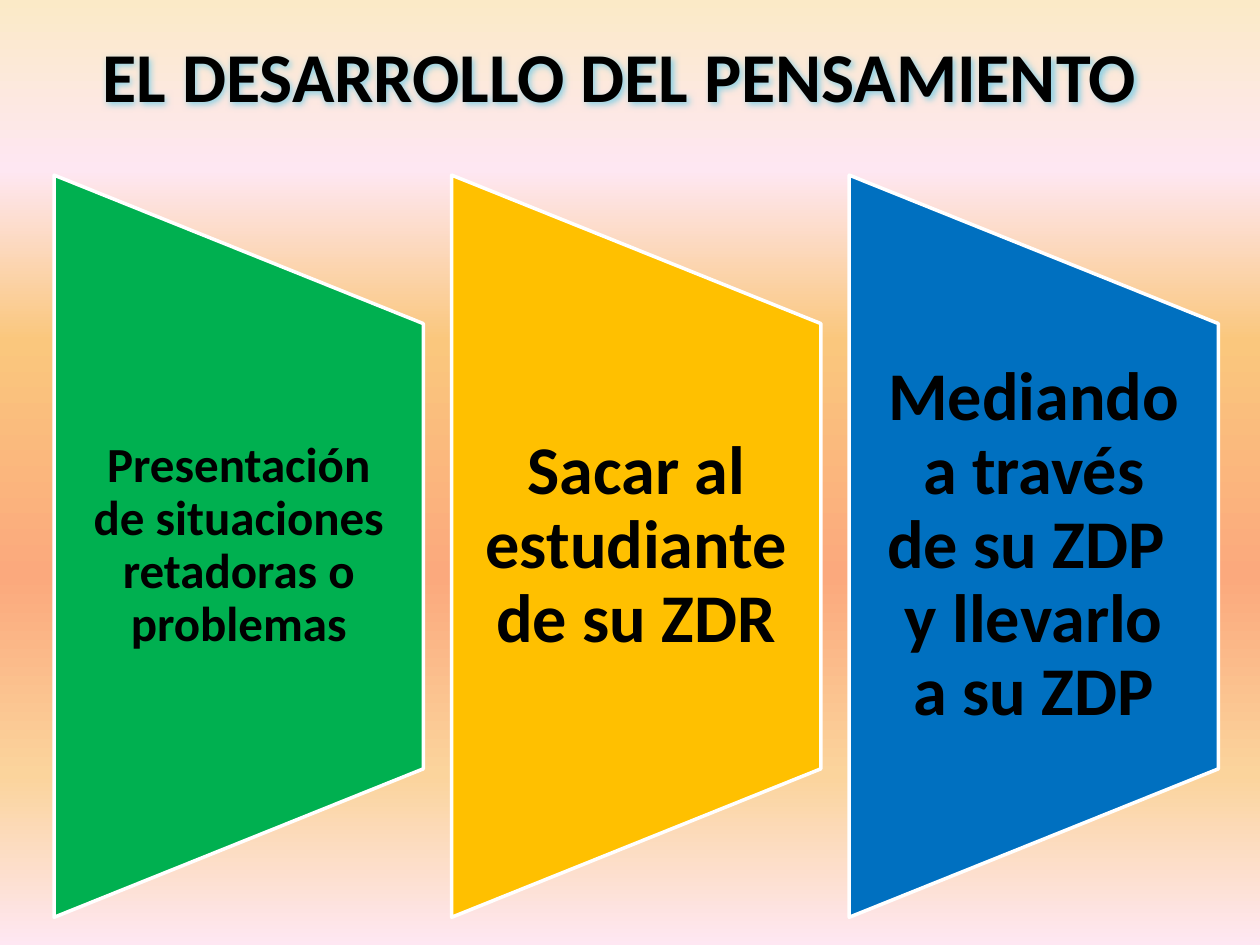
from typing import NamedTuple

from lxml import etree
from pptx import Presentation
from pptx.dml.color import RGBColor
from pptx.enum import shapes, text
from pptx.oxml import ns
from pptx.util import Inches, Pt

COLORS = {"green": "00B050", "yellow": "FFC000", "blue": "0070C0",
          "white": "FFFFFF", "black": "000000", "glow": "8CD0E4"}
BACKGROUND_STOPS = [(0, "FBEAC7"), (18, "FEE7F2"), (36, "FAC77D"),
                    (61, "FBA97D"), (82, "FBD49C"), (100, "FEE7F2")]
FONT = "Calibri"

# Three panels spread evenly between the first and last left edges
FIRST_LEFT, LAST_LEFT = 0.43, 6.74
PANEL_TOP, PANEL_WIDTH, PANEL_HEIGHT = 1.39, 2.93, 5.89
TEXT_HEIGHT = 3.54


class Panel(NamedTuple):
    wording: str
    color: str
    size: int
    inset: float


PANELS = [
    Panel("Presentación de situaciones retadoras o problemas", "green", 28, 0.19),
    Panel("Sacar al estudiante de su ZDR", "yellow", 39, 0.25),
    Panel("Mediando a través de su ZDP  y llevarlo a su ZDP", "blue", 39, 0.25),
]


def rgb(name: str) -> RGBColor:
    return RGBColor.from_string(COLORS[name])


def add_element(parent, tag: str, **attributes):
    element = etree.SubElement(parent, ns.qn(tag))
    for name, value in attributes.items():
        element.set(name, str(value))
    return element


def paint_background(slide) -> None:
    fill = slide.background.fill
    fill.gradient()
    fill.gradient_angle = 270  # counter-clockwise: runs from top to bottom
    stops = fill.gradient_stops._gsLst
    for stop in list(stops):
        stops.remove(stop)
    for position, color in BACKGROUND_STOPS:
        stop = add_element(stops, "a:gs", pos=position * 1000)
        add_element(stop, "a:srgbClr", val=color)


def add_text(slide, box: tuple, wording: str, size: int, **frame_format):
    shape = slide.shapes.add_textbox(*map(Inches, box))
    frame = shape.text_frame
    for name, value in {"word_wrap": True, **frame_format}.items():
        setattr(frame, name, value)
    paragraph = frame.paragraphs[0]
    paragraph.alignment = text.PP_ALIGN.CENTER
    run = paragraph.add_run()
    run.text = wording
    for name, value in {"name": FONT, "size": Pt(size), "bold": True}.items():
        setattr(run.font, name, value)
    run.font.color.rgb = rgb("black")
    return shape


def add_panel(slide, panel: Panel, left: float) -> None:
    # Trapezoid turned on its side about its own centre
    shift = (PANEL_HEIGHT - PANEL_WIDTH) / 2
    shape = slide.shapes.add_shape(
        shapes.MSO_SHAPE.FLOWCHART_MANUAL_OPERATION,
        Inches(left - shift), Inches(PANEL_TOP + shift),
        Inches(PANEL_HEIGHT), Inches(PANEL_WIDTH))
    shape.rotation = 270
    shape.shadow.inherit = False
    shape.fill.solid()
    shape.fill.fore_color.rgb = rgb(panel.color)
    shape.line.color.rgb = rgb("white")
    shape.line.width = Pt(2)

    # Upright wording, centred on the trapezoid
    top = PANEL_TOP + (PANEL_HEIGHT - TEXT_HEIGHT) / 2
    label = add_text(
        slide, (left, top, PANEL_WIDTH, TEXT_HEIGHT), panel.wording, panel.size,
        vertical_anchor=text.MSO_ANCHOR.MIDDLE,
        margin_left=Inches(panel.inset), margin_right=Inches(panel.inset),
        margin_top=0, margin_bottom=0)
    label.text_frame.paragraphs[0].line_spacing = 0.9


def add_title(slide) -> None:
    title = add_text(slide, (0.29, 0.21, 9.38, 0.77),
                     "EL DESARROLLO DEL PENSAMIENTO ", 40,
                     auto_size=text.MSO_AUTO_SIZE.SHAPE_TO_FIT_TEXT)
    # Thin letter outline
    run_properties = title.text_frame.paragraphs[0].runs[0].font._element
    outline = add_element(run_properties, "a:ln", w=Pt(0.71))
    line_fill = add_element(outline, "a:solidFill")
    add_element(line_fill, "a:srgbClr", val=COLORS["black"])
    run_properties.insert(0, outline)
    # Soft coloured shadow behind the letters
    effects = add_element(title._element.spPr, "a:effectLst")
    shadow = add_element(effects, "a:outerShdw", blurRad=Pt(4), dist=Pt(1),
                         dir=2700000, algn="tl", rotWithShape=0)
    add_element(shadow, "a:srgbClr", val=COLORS["glow"])


def main() -> None:
    presentation = Presentation()
    presentation.slide_width = Inches(10)
    presentation.slide_height = Inches(7.5)
    slide = presentation.slides.add_slide(presentation.slide_layouts[6])
    paint_background(slide)
    pitch = (LAST_LEFT - FIRST_LEFT) / (len(PANELS) - 1)
    for index, panel in enumerate(PANELS):
        add_panel(slide, panel, FIRST_LEFT + index * pitch)
    add_title(slide)
    presentation.save("out.pptx")


if __name__ == "__main__":
    main()
